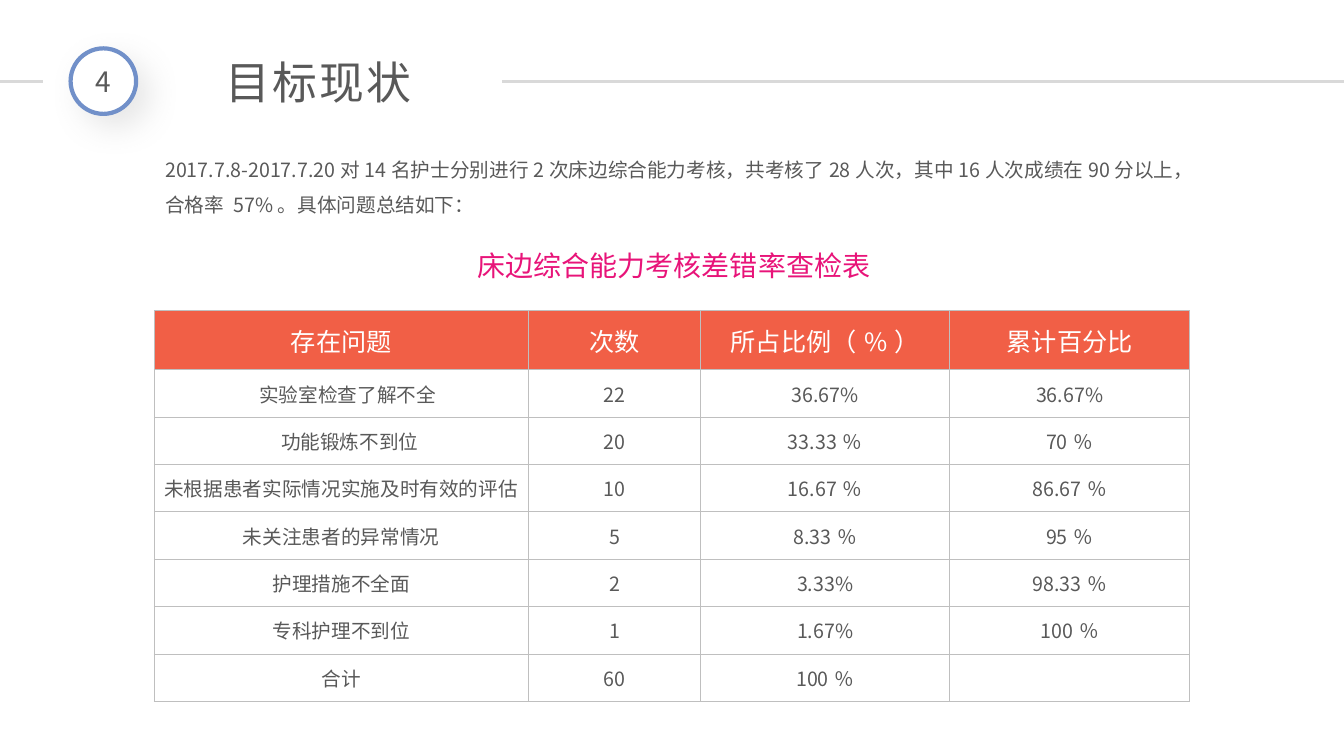
import pptx
import pptx.dml.color
import pptx.enum.shapes
import pptx.enum.text
import pptx.oxml
import pptx.oxml.ns
import pptx.util

Inches = pptx.util.Inches
Pt = pptx.util.Pt
RGBColor = pptx.dml.color.RGBColor
ALIGN = pptx.enum.text.PP_ALIGN
ANCHOR = pptx.enum.text.MSO_ANCHOR
AUTO_SIZE = pptx.enum.text.MSO_AUTO_SIZE
qn = pptx.oxml.ns.qn

WHITE = RGBColor(0xFF, 0xFF, 0xFF)
BODY_GRAY = RGBColor(0x59, 0x59, 0x59)
RULE_GRAY = RGBColor(0xD9, 0xD9, 0xD9)
GRID_GRAY = RGBColor(0xBF, 0xBF, 0xBF)
BADGE_BLUE = RGBColor(0x71, 0x90, 0xC9)
HEADER_ORANGE = RGBColor(0xF1, 0x5F, 0x46)
CAPTION_PINK = RGBColor(0xE8, 0x14, 0x79)
FONT = "Noto Sans CJK SC"

HEADINGS = ["存在问题", "次数", "所占比例（%）", "累计百分比"]
PROBLEMS = [
    ["实验室检查了解不全", "22", "36.67%", "36.67%"],
    ["功能锻炼不到位", "20", "33.33％", "70％"],
    ["未根据患者实际情况实施及时有效的评估", "10", "16.67％", "86.67％"],
    ["未关注患者的异常情况", "5", "8.33％", "95％"],
    ["护理措施不全面", "2", "3.33%", "98.33％"],
    ["专科护理不到位", "1", "1.67%", "100％"],
    ["合计", "60", "100％", ""],
]
COLUMN_WIDTHS = [3.71, 1.71, 2.47, 2.38]
PROBLEM_INDENTS = {1: 0.13, 2: 0.17}


def xml(tag, content):
    return pptx.oxml.parse_xml(
        f'<a:{tag} {pptx.oxml.ns.nsdecls("a")}>{content}</a:{tag.split()[0]}>')


def write_text(frame, text, size=14, color=BODY_GRAY, align=ALIGN.CENTER,
               line_spacing=None, letter_spacing=None):
    paragraph = frame.paragraphs[0]
    paragraph.alignment = align
    paragraph.line_spacing = line_spacing
    run = paragraph.add_run()
    run.text = text
    run.font.size = Pt(size)
    run.font.color.rgb = color
    run.font.name = FONT
    properties = run.font._element
    properties.find(qn("a:latin")).addnext(xml(f'ea typeface="{FONT}"', ""))
    if letter_spacing:
        properties.set("spc", str(round(letter_spacing * 100)))


class StatusSlide:
    def __init__(self, slide):
        self.slide = slide
        self.shapes = slide.shapes

    def badge(self, number, left, top, size):
        circle = self.shapes.add_shape(
            pptx.enum.shapes.MSO_SHAPE.OVAL,
            Inches(left), Inches(top), Inches(size), Inches(size))
        circle.shadow.inherit = False
        circle.fill.solid()
        circle.fill.fore_color.rgb = WHITE
        circle.line.color.rgb = BADGE_BLUE
        circle.line.width = Pt(3)
        circle._element.spPr.find(qn("a:effectLst")).append(xml(
            f'outerShdw blurRad="{Pt(22)}" dist="{Pt(12)}" dir="2700000" '
            'algn="tl" rotWithShape="0"',
            f'<a:srgbClr val="{GRID_GRAY}"><a:alpha val="36000"/></a:srgbClr>'))
        circle.text_frame.vertical_anchor = ANCHOR.MIDDLE
        write_text(circle.text_frame, number, size=20)

    def rule(self, start, end, y):
        line = self.shapes.add_connector(
            pptx.enum.shapes.MSO_CONNECTOR.STRAIGHT,
            Inches(start), Inches(y), Inches(end), Inches(y))
        line.line.color.rgb = RULE_GRAY
        line.line.width = Pt(2)
        line._element.spPr.append(xml("effectLst", ""))

    def text(self, text, left, top, width, height, wrap=True, **text_format):
        box = self.shapes.add_textbox(
            Inches(left), Inches(top), Inches(width), Inches(height))
        box.text_frame.word_wrap = wrap
        box.text_frame.auto_size = AUTO_SIZE.SHAPE_TO_FIT_TEXT
        write_text(box.text_frame, text, **text_format)

    def cell(self, cell, text, fill=None, indent=0, **text_format):
        cell.vertical_anchor = ANCHOR.MIDDLE
        cell.margin_left = Inches(0.1 + indent)
        if fill is None:
            cell.fill.background()
        else:
            cell.fill.solid()
            cell.fill.fore_color.rgb = fill
        for position, side in enumerate("LRTB"):
            cell._tc.tcPr.insert(position, xml(
                f'ln{side} w="{Pt(0.75)}"',
                f'<a:solidFill><a:srgbClr val="{GRID_GRAY}"/></a:solidFill>'))
        if text:
            write_text(cell.text_frame, text, **text_format)

    def table(self, headings, rows, left, top, header_height, row_height):
        height = header_height + row_height * len(rows)
        table = self.shapes.add_table(
            len(rows) + 1, len(headings), Inches(left), Inches(top),
            Inches(sum(COLUMN_WIDTHS)), Inches(height)).table
        table.horz_banding = False
        for column, width in zip(table.columns, COLUMN_WIDTHS):
            column.width = Inches(width)
        for row in table.rows:
            row.height = Inches(row_height)
        table.rows[0].height = Inches(header_height)
        for column, heading in enumerate(headings):
            self.cell(table.cell(0, column), heading, fill=HEADER_ORANGE,
                      size=18, color=WHITE)
        for number, values in enumerate(rows, start=1):
            for column, value in enumerate(values):
                indent = PROBLEM_INDENTS.get(number, 0) if column == 0 else 0
                self.cell(table.cell(number, column), value, indent=indent)


def main():
    presentation = pptx.Presentation()
    presentation.slide_width = Inches(13.33)
    presentation.slide_height = Inches(7.5)
    status = StatusSlide(
        presentation.slides.add_slide(presentation.slide_layouts[6]))

    status.badge("4", 0.7, 0.48, 0.65)
    status.text("目标现状", 1.34, 0.49, 3.64, 0.64, size=32, letter_spacing=1.5)
    status.rule(0, 0.43, 0.81)
    status.rule(4.98, 13.33, 0.81)
    status.text(
        "2017.7.8-2017.7.20对14名护士分别进行2次床边综合能力考核，共考核了28人次，"
        "其中16人次成绩在90分以上，合格率 57%。具体问题总结如下：",
        1.54, 1.4, 10.27, 0.77, align=ALIGN.LEFT, line_spacing=1.5)
    status.table(HEADINGS, PROBLEMS, 1.53, 3.08, 0.59, 0.47)
    status.text("床边综合能力考核差错率查检表", 4.62, 2.42, 4.13, 0.44,
                wrap=False, size=20, color=CAPTION_PINK)

    presentation.save("out.pptx")


if __name__ == "__main__":
    main()
